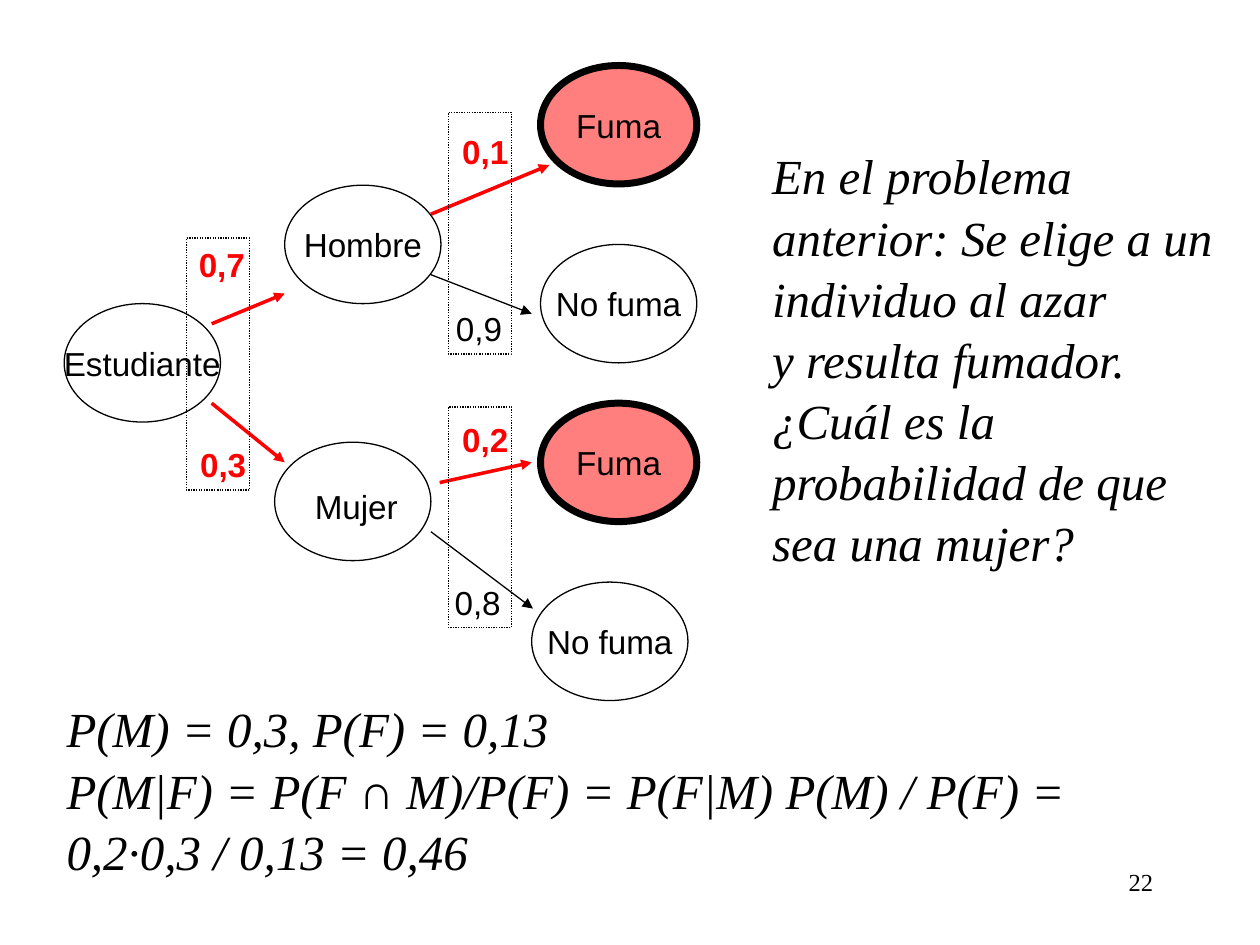
from dataclasses import dataclass

from lxml import etree
from pptx import Presentation
from pptx.dml.color import RGBColor
from pptx.enum.dml import MSO_LINE
from pptx.enum.shapes import MSO_CONNECTOR, MSO_SHAPE
from pptx.enum.text import MSO_ANCHOR, PP_ALIGN
from pptx.oxml.ns import qn
from pptx.util import Inches, Pt

STRAIGHT = MSO_CONNECTOR.STRAIGHT
OVAL, RECTANGLE = MSO_SHAPE.OVAL, MSO_SHAPE.RECTANGLE
MIDDLE = MSO_ANCHOR.MIDDLE
CENTER, LEFT, RIGHT = PP_ALIGN.CENTER, PP_ALIGN.LEFT, PP_ALIGN.RIGHT
DOTTED = MSO_LINE.ROUND_DOT


@dataclass(frozen=True)
class Theme:
    """Colours, fonts, type sizes and line widths of the slide."""
    black: RGBColor = RGBColor(0, 0, 0)
    red: RGBColor = RGBColor(255, 0, 0)
    sans: str = "Arial"
    serif: str = "Times New Roman"
    label: int = 19
    prose: int = 28
    number: int = 14
    thin: float = 0.75
    branch: float = 2
    thick: float = 4
    leading: float = 1.04


THEME = Theme()
NODE_SIZE = (1.24, 0.94)
LABEL_SIZE = (0.57, 0.42)

NODES = [
    ("Estudiante", 0.51, 2.41, False),
    ("Hombre", 2.26, 1.47, False),
    ("No fuma", 4.29, 1.94, False),
    ("", 2.18, 3.51, False),
    ("Fuma", 4.29, 0.52, True),
    ("No fuma", 4.22, 4.62, False),
    ("Fuma", 4.29, 3.2, True),
]
BRANCHES = [
    ((1.68, 2.57), (2.26, 2.33), True),
    ((1.68, 3.2), (2.26, 3.67), True),
    ((3.42, 1.7), (4.36, 1.31), True),
    ((3.42, 2.18), (4.22, 2.49), False),
    ((3.49, 3.83), (4.22, 3.67), True),
    ((3.42, 4.22), (4.23, 4.83), False),
]
PROBABILITIES = [
    ("0,7", 1.48, 1.89, True),
    ("0,1", 3.57, 0.99, True),
    ("0,2", 3.57, 3.28, True),
    ("0,3", 1.49, 3.48, True),
    ("0,8", 3.51, 4.57, False),
    ("0,9", 3.52, 2.4, False),
]
STAGES = [(1.48, 1.89, 2), (3.56, 0.89, 1.92), (3.56, 3.23, 1.75)]
SOLUTION = [
    "P(M) = 0,3, P(F) = 0,13",
    "P(M|F) = P(F ∩ M)/P(F) = P(F|M) P(M) / P(F) =",
    "0,2·0,3 / 0,13 = 0,46",
]
QUESTION = [
    "En el problema anterior: Se elige a un individuo al azar",
    "y resulta fumador. ¿Cuál es la",
    "probabilidad de que sea una mujer?",
]


def style(para, face, size, color=THEME.black, bold=False, italic=False):
    """Set the font of a whole paragraph."""
    font = para.font
    font.name, font.size = face, Pt(size)
    font.bold, font.italic = bold, italic
    font.color.rgb = color


def add_outline(slide, kind, left, top, width, height, weight=THEME.thin):
    """Add an unfilled black outline without shadow."""
    shape = slide.shapes.add_shape(
        kind, Inches(left), Inches(top), Inches(width), Inches(height))
    shape.shadow.inherit = False
    shape.fill.background()
    shape.line.color.rgb = THEME.black
    shape.line.width = Pt(weight)
    return shape


def add_node(slide, text, left, top, smoker):
    """Add a tree node; smokers are translucent red with a thick outline."""
    weight = THEME.thick if smoker else THEME.thin
    node = add_outline(slide, OVAL, left, top, *NODE_SIZE, weight)
    if smoker:
        node.fill.solid()
        node.fill.fore_color.rgb = THEME.red
        color = node.fill._xPr.find(qn("a:solidFill"))[0]
        etree.SubElement(color, qn("a:alpha"), val="50000")
    if text:
        frame = node.text_frame
        frame.word_wrap = False
        frame.vertical_anchor = MIDDLE
        para = frame.paragraphs[0]
        para.text, para.alignment = text, CENTER
        style(para, THEME.sans, THEME.label)


def add_branch(slide, start, end, marked):
    """Add an arrow between two nodes, red if it is marked."""
    points = [Inches(value) for value in (*start, *end)]
    branch = slide.shapes.add_connector(STRAIGHT, *points)
    branch.line.color.rgb = THEME.red if marked else THEME.black
    branch.line.width = Pt(THEME.branch if marked else THEME.thin)
    etree.SubElement(branch.line._get_or_add_ln(), qn("a:tailEnd"), type="triangle")
    etree.SubElement(branch._element.spPr, qn("a:effectLst"))


def add_text(slide, lines, left, top, width, height, wrap=True,
             align=LEFT, spacing=1.0, **font):
    """Add a text box with one paragraph per line."""
    box = slide.shapes.add_textbox(
        Inches(left), Inches(top), Inches(width), Inches(height))
    frame = box.text_frame
    frame.word_wrap = wrap
    frame.text = "\n".join(lines)
    for para in frame.paragraphs:
        para.alignment, para.line_spacing = align, spacing
        style(para, **font)


def add_prose(slide, lines, *place):
    """Add a block of large italic text."""
    add_text(slide, lines, *place, spacing=THEME.leading,
             face=THEME.serif, size=THEME.prose, italic=True)


def add_label(slide, text, left, top, marked=False, size=LABEL_SIZE):
    """Add a diagram label, bold red if it is marked."""
    add_text(slide, [text], left, top, *size, wrap=False,
             face=THEME.sans, size=THEME.label, bold=marked,
             color=THEME.red if marked else THEME.black)


def main():
    """Build the probability tree slide and save it."""
    deck = Presentation()
    deck.slide_width, deck.slide_height = Inches(10), Inches(7.5)
    slide = deck.slides.add_slide(deck.slide_layouts[6])
    add_text(slide, ["22"], 7.17, 6.83, 2.08, 0.5, align=RIGHT,
             face=THEME.serif, size=THEME.number)
    add_prose(slide, SOLUTION, 0.43, 5.48, 8.9, 1.5)
    for node in NODES:
        add_node(slide, *node)
    for branch in BRANCHES:
        add_branch(slide, *branch)
    for probability in PROBABILITIES:
        add_label(slide, *probability)
    for left, top, height in STAGES:
        stage = add_outline(slide, RECTANGLE, left, top, 0.5, height)
        stage.line.dash_style = DOTTED
    add_label(slide, "Mujer", 2.4, 3.81, size=(0.86, 0.42))
    add_prose(slide, QUESTION, 6.03, 1.09, 3.7, 3.37)
    deck.save("out.pptx")


if __name__ == "__main__":
    main()
